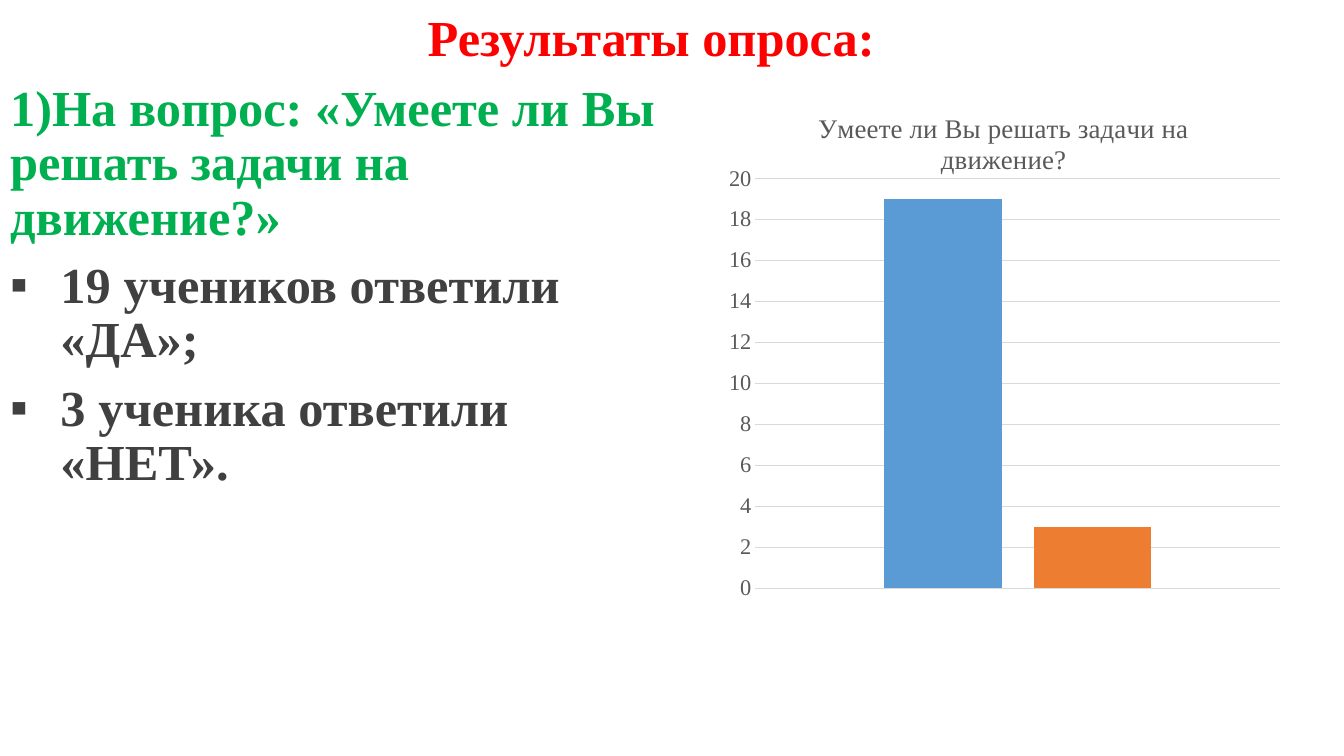
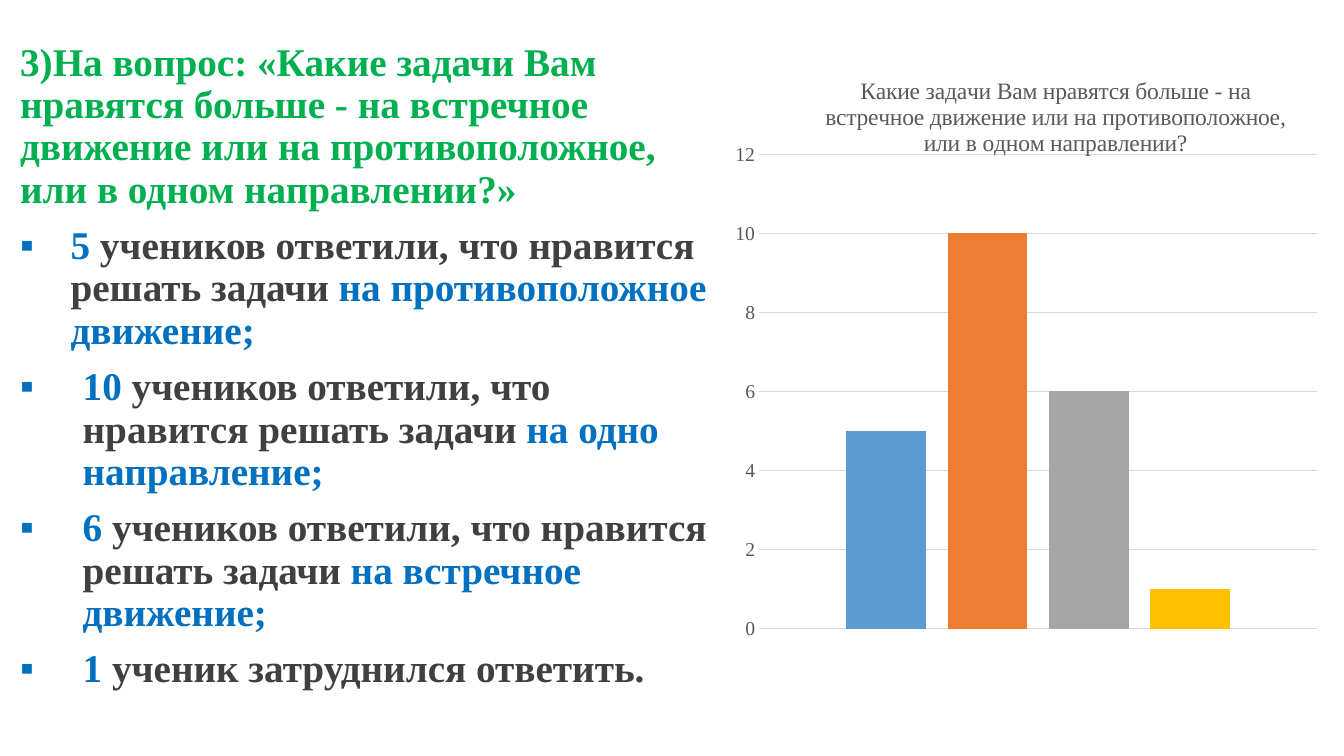
import pptx
import pptx.chart.data
import pptx.dml.color
import pptx.enum.chart
import pptx.enum.text
import pptx.oxml
import pptx.oxml.ns
import pptx.util

Inches = pptx.util.Inches
Pt = pptx.util.Pt
RGBColor = pptx.dml.color.RGBColor

FONT = "Times New Roman"
RED = RGBColor(0xFF, 0x00, 0x00)
GREEN = RGBColor(0x00, 0xB0, 0x50)
BLUE = RGBColor(0x00, 0x70, 0xC0)
DARK = RGBColor(0x40, 0x40, 0x40)
GRAY = RGBColor(0x59, 0x59, 0x59)
GRID = RGBColor(0xD9, 0xD9, 0xD9)
BARS = [RGBColor(0x5B, 0x9B, 0xD5), RGBColor(0xED, 0x7D, 0x31),
        RGBColor(0xA5, 0xA5, 0xA5), RGBColor(0xFF, 0xC0, 0x00)]


def style_font(font, size, color, bold=False):
    font.name = FONT
    font.size = Pt(size)
    font.bold = bold
    font.color.rgb = color


def add_run(p, text, size=28, color=DARK, bold=True):
    r = p.add_run()
    r.text = text
    style_font(r.font, size, color, bold)


def set_layout(parent, index, **parts):
    for old in parent.findall(pptx.oxml.ns.qn("c:layout")):
        parent.remove(old)
    xml = "".join(f'<c:{tag} val="{val}"/>' for tag, val in parts.items())
    parent.insert(index, pptx.oxml.parse_xml(
        f'<c:layout {pptx.oxml.ns.nsdecls("c")}><c:manualLayout>{xml}'
        '</c:manualLayout></c:layout>'))


class SurveyDeck:
    """Survey slides with a question list on the left and a chart on the right."""

    def __init__(self):
        self.prs = pptx.Presentation()
        self.prs.slide_width = Inches(13.33)
        self.prs.slide_height = Inches(7.5)
        self.s = None

    def add_slide(self):
        self.s = self.prs.slides.add_slide(self.prs.slide_layouts[1])

    def place(self, sp, box, anchor):
        sp.left, sp.top, sp.width, sp.height = map(Inches, box)
        tf = sp.text_frame
        tf.word_wrap = True
        tf.auto_size = pptx.enum.text.MSO_AUTO_SIZE.NONE
        tf.vertical_anchor = anchor
        return tf

    def title(self, text, box):
        tf = self.place(self.s.shapes.title, box, pptx.enum.text.MSO_ANCHOR.MIDDLE)
        p = tf.paragraphs[0]
        p.alignment = pptx.enum.text.PP_ALIGN.CENTER
        p.line_spacing = 0.9
        add_run(p, text, size=36, color=RED)

    def no_title(self):
        sp = self.s.shapes.title._element
        sp.getparent().remove(sp)

    def paragraph(self, p, runs, size, indent=0):
        p.line_spacing = 0.9
        p.space_before = Pt(10)
        pPr = p._p.get_or_add_pPr()
        pPr.set("marL", str(Inches(indent)))
        pPr.set("indent", str(-Inches(indent)))
        bullet = '<a:buChar {} char="▪"/>' if indent else "<a:buNone {}/>"
        pPr.append(pptx.oxml.parse_xml(bullet.format(pptx.oxml.ns.nsdecls("a"))))
        for text, color in runs:
            add_run(p, text, size=size, color=color)

    def body(self, question, answers, box, size):
        tf = self.place(self.s.placeholders[1], box, pptx.enum.text.MSO_ANCHOR.TOP)
        self.paragraph(tf.paragraphs[0], [(question, GREEN)], size)
        for indent, runs in answers:
            self.paragraph(tf.add_paragraph(), runs, size, indent)

    def chart(self, title, values, top, box, size, title_size):
        data = pptx.chart.data.CategoryChartData()
        data.categories = ["1"]
        for n, value in enumerate(values, 1):
            data.add_series(f"Series {n}", [value])
        chart = self.s.shapes.add_chart(
            pptx.enum.chart.XL_CHART_TYPE.COLUMN_CLUSTERED,
            *map(Inches, box), data).chart
        style_font(chart.font, size, GRAY)
        chart.has_legend = False
        chart.has_title = True
        p = chart.chart_title.text_frame.paragraphs[0]
        add_run(p, title, size=title_size, color=GRAY, bold=False)
        set_layout(chart.chart_title._element, 1,
                   xMode="edge", yMode="edge", x=0.16, y=0.02)
        set_layout(chart._chartSpace.chart.plotArea, 0, layoutTarget="inner",
                   xMode="edge", yMode="edge", x=0.056, y=0.153, w=0.94, h=0.755)
        self.axes(chart, top, size)
        plot = chart.plots[0]
        plot.vary_by_categories = False
        plot.gap_width = 219
        plot.overlap = -27
        for series, color in zip(plot.series, BARS):
            series.format.fill.solid()
            series.format.fill.fore_color.rgb = color

    def axes(self, chart, top, size):
        chart.category_axis.visible = False
        axis = chart.value_axis
        axis.minimum_scale = 0
        axis.maximum_scale = top
        axis.major_unit = 2
        axis.major_tick_mark = pptx.enum.chart.XL_TICK_MARK.NONE
        axis.minor_tick_mark = pptx.enum.chart.XL_TICK_MARK.NONE
        axis.format.line.fill.background()
        axis.major_gridlines.format.line.color.rgb = GRID
        axis.major_gridlines.format.line.width = Pt(0.75)
        style_font(axis.tick_labels.font, size, GRAY)


def main():
    deck = SurveyDeck()

    ability = "Умеете ли Вы решать задачи на движение?"
    deck.add_slide()
    deck.title("Результаты опроса:", (0.71, 0.2, 11.5, 0.4))
    deck.body(f"1)На вопрос: «{ability}»", [
        (0.5, [("19 учеников ответили «ДА»;", DARK)]),
        (0.5, [("3 ученика ответили «НЕТ».", DARK)]),
    ], (0, 0.77, 6.77, 6.73), 36)
    deck.chart(ability, [19, 3], 20, (7.18, 0.95, 5.54, 5.38), 16, 19.2)

    preference = ("Какие задачи Вам нравятся больше - на встречное движение "
                  "или на противоположное, или в одном направлении?")
    liked = " учеников ответили, что нравится решать задачи "
    deck.add_slide()
    deck.no_title()
    deck.body(f"3)На вопрос: «{preference}»", [
        (0.5, [("5", BLUE), (liked, DARK), ("на противоположное движение;", BLUE)]),
        (0.62, [("10", BLUE), (liked, DARK), ("на одно направление;", BLUE)]),
        (0.62, [("6", BLUE), (liked, DARK), ("на встречное движение;", BLUE)]),
        (0.62, [("1", BLUE), (" ученик затруднился ответить.", DARK)]),
    ], (0.1, 0.37, 7.11, 6.7), 28)
    deck.chart(preference, [5, 10, 6, 1], 12, (7.2, 0.58, 5.89, 6.23), 14, 16.8)

    deck.prs.save("out.pptx")


if __name__ == "__main__":
    main()
